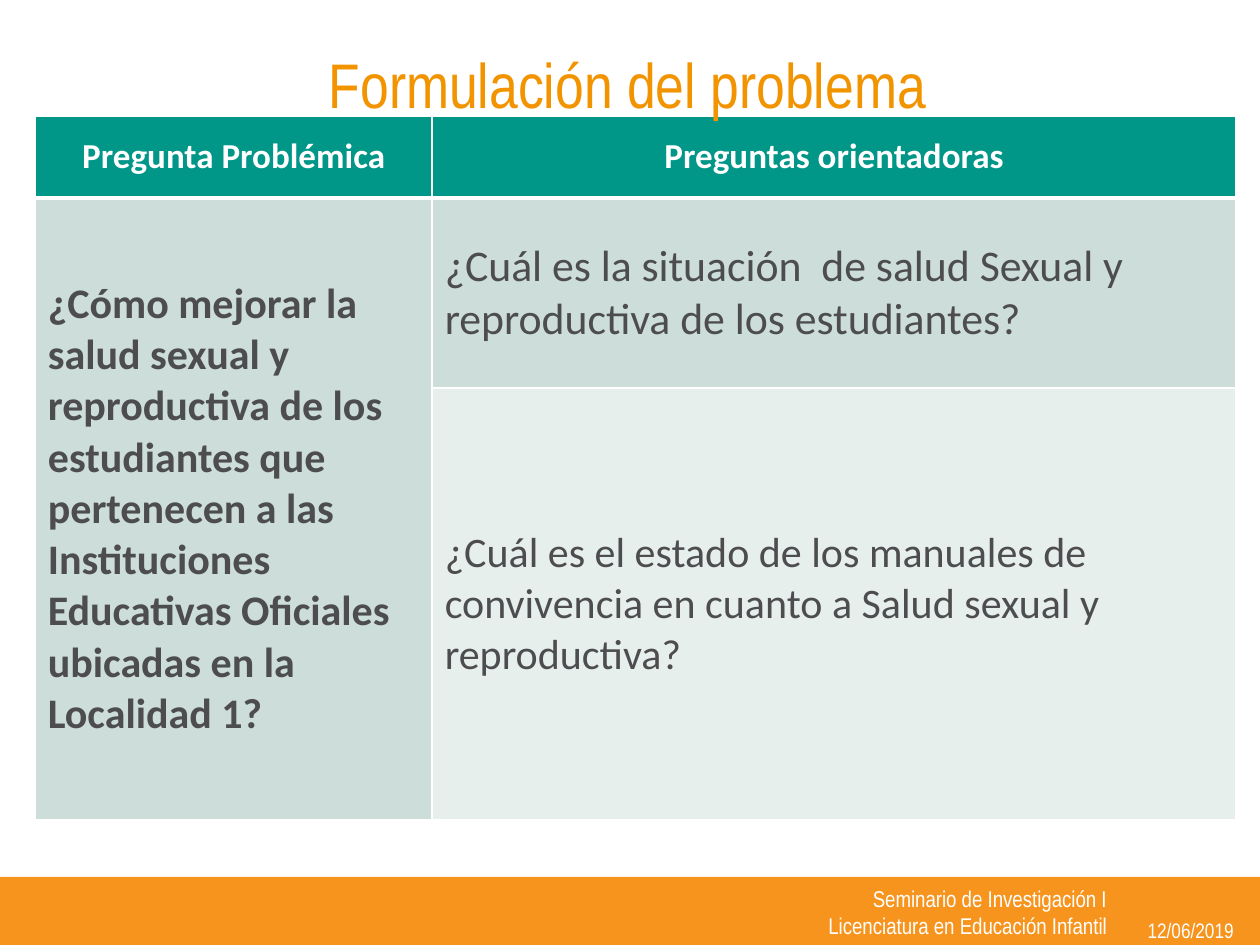
from lxml import etree
from pptx import Presentation
from pptx.dml.color import RGBColor
from pptx.enum import shapes, text
from pptx.oxml import ns
from pptx.util import Inches, Pt

WHITE = RGBColor(0xFF, 0xFF, 0xFF)
ORANGE = RGBColor(0xF7, 0x94, 0x1D)
TITLE_ORANGE = RGBColor(0xF2, 0x94, 0x00)
TEAL = RGBColor(0x00, 0x96, 0x88)
PALE_TEAL = RGBColor(0xCC, 0xDD, 0xDA)
PALE_GREY = RGBColor(0xE7, 0xEF, 0xED)
DARK_GREY = RGBColor(0x4D, 0x4D, 0x4F)

CENTER, LEFT, RIGHT = (text.PP_ALIGN.CENTER, text.PP_ALIGN.LEFT,
                       text.PP_ALIGN.RIGHT)
MIDDLE = text.MSO_ANCHOR.MIDDLE

COLUMNS = [3.15, 6.38]
ROWS = [0.65, 1.51, 3.43]
HEADER = {"name": "Calibri", "size": Pt(20), "bold": True}
QUESTION = {"name": "Calibri", "size": Pt(24), "bold": False}

# row, column, wording, fill, text colour, alignment, font
CELLS = [
    (0, 0, "Pregunta Problémica", TEAL, WHITE, CENTER, HEADER),
    (0, 1, "Preguntas orientadoras", TEAL, WHITE, CENTER, HEADER),
    (1, 0, "¿Cómo mejorar la salud sexual y reproductiva de los estudiantes "
           "que pertenecen a las Instituciones Educativas Oficiales ubicadas "
           "en la Localidad 1?",
     PALE_TEAL, DARK_GREY, LEFT, {**QUESTION, "bold": True}),
    (1, 1, "¿Cuál es la situación  de salud Sexual y reproductiva de los "
           "estudiantes?",
     PALE_TEAL, DARK_GREY, LEFT, {**QUESTION, "size": Pt(25)}),
    (2, 1, "¿Cuál es el estado de los manuales de convivencia en cuanto a "
           "Salud sexual y reproductiva?",
     PALE_GREY, DARK_GREY, LEFT, QUESTION),
]


def write(frame, lines, color, align, font):
    """Fill a text frame with one formatted paragraph per line."""
    frame.word_wrap = True
    frame.text = "\n".join(lines)
    for para in frame.paragraphs:
        para.alignment = align
        for span in para.runs:
            for key, value in font.items():
                setattr(span.font, key, value)
            span.font.color.rgb = color


def add_label(page, place, lines, align, size):
    box = page.shapes.add_textbox(*map(Inches, place))
    box.text_frame.vertical_anchor = MIDDLE
    write(box.text_frame, lines, WHITE, align,
          {"name": "Arial Narrow", "size": Pt(size)})


def add_footer(page):
    bar = page.shapes.add_shape(shapes.MSO_SHAPE.RECTANGLE, 0, Inches(6.96),
                                Inches(10), Inches(0.56))
    bar.shadow.inherit = False
    bar.fill.solid()
    bar.fill.fore_color.rgb = ORANGE
    bar.line.fill.background()
    add_label(page, (8.92, 7.28, 1.06, 0.21), ["12/06/2019"], CENTER, 12)
    add_label(page, (4.78, 6.97, 4.1, 0.53),
              ["Seminario de Investigación I",
               "Licenciatura en Educación Infantil"], RIGHT, 13)


def set_borders(cell, bottom, top):
    """Draw white cell borders; they must come before the fill."""
    properties = cell._tc.get_or_add_tcPr()
    widths = {"lnL": 1, "lnR": 1, "lnT": top, "lnB": bottom}
    for index, (tag, width) in enumerate(widths.items()):
        line = etree.Element(ns.qn(f"a:{tag}"), w=str(Pt(width)))
        fill = etree.SubElement(line, ns.qn("a:solidFill"))
        etree.SubElement(fill, ns.qn("a:srgbClr"), val=str(WHITE))
        properties.insert(index, line)


def add_questions(page):
    table = page.shapes.add_table(
        len(ROWS), len(COLUMNS), Inches(0.28), Inches(0.92),
        Inches(sum(COLUMNS)), Inches(sum(ROWS))).table
    for column, width in zip(table.columns, COLUMNS):
        column.width = Inches(width)
    for row, height in zip(table.rows, ROWS):
        row.height = Inches(height)
    table.cell(1, 0).merge(table.cell(2, 0))
    for row, column, wording, fill, color, align, font in CELLS:
        cell = table.cell(row, column)
        cell.vertical_anchor = MIDDLE
        cell.fill.solid()
        cell.fill.fore_color.rgb = fill
        write(cell.text_frame, [wording], color, align, font)
        set_borders(cell, bottom=3 if row == 0 else 1,
                    top=3 if row == 1 else 1)


def add_title(page):
    title = page.shapes.title
    place = {"left": 0.67, "top": 0.13, "width": 8.62, "height": 1.07}
    for key, value in place.items():
        setattr(title, key, Inches(value))
    title.text_frame.vertical_anchor = MIDDLE
    write(title.text_frame, ["Formulación del problema"], TITLE_ORANGE,
          CENTER, {"name": "Arial Narrow", "size": Pt(36)})
    # The title lies in front of the table
    page.shapes._spTree.append(title._element)


def main():
    deck = Presentation()
    deck.slide_width, deck.slide_height = Inches(10), Inches(7.5)
    page = deck.slides.add_slide(deck.slide_layouts[5])
    add_footer(page)
    add_questions(page)
    add_title(page)
    deck.save("out.pptx")


if __name__ == "__main__":
    main()
